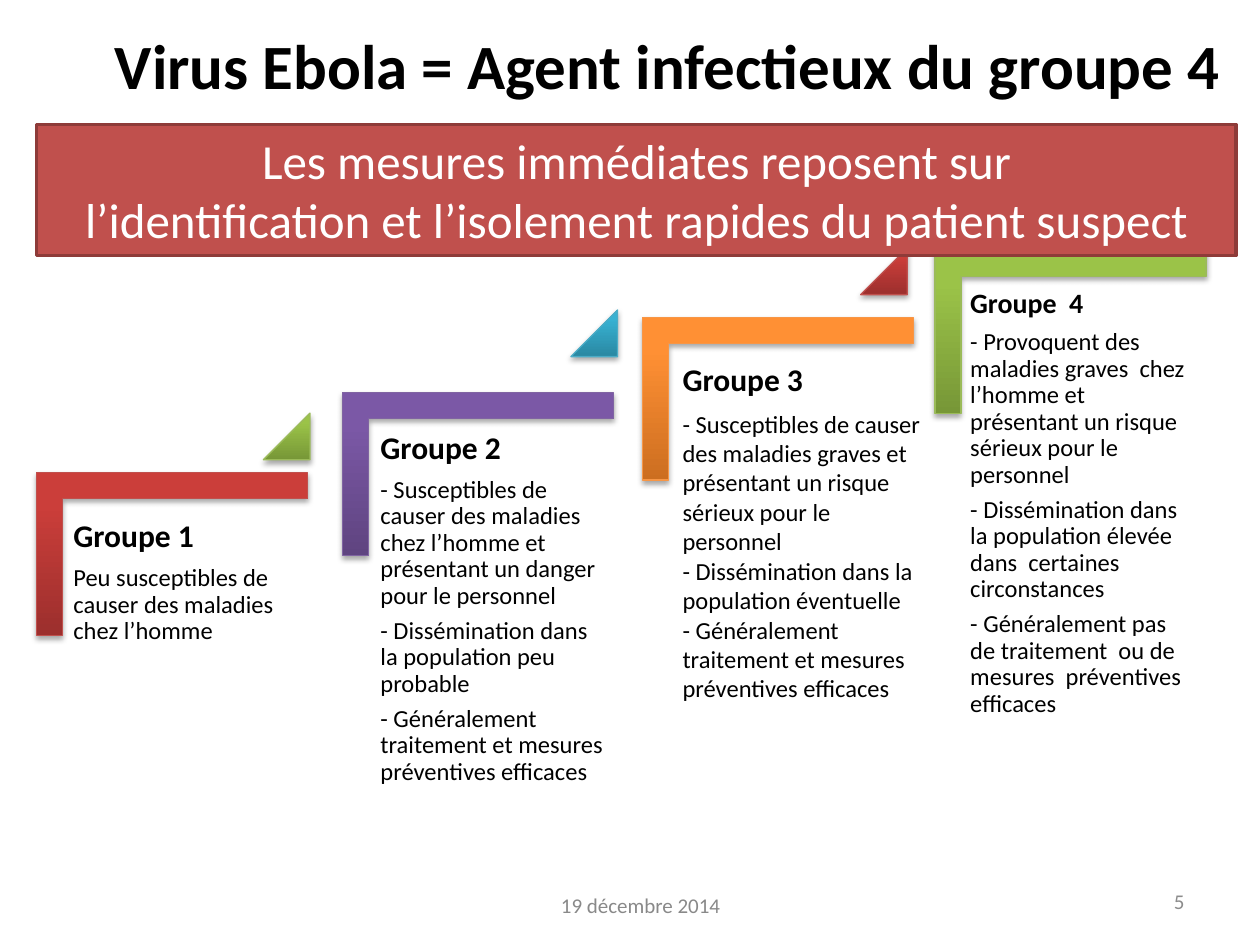
from lxml import etree
from pptx import Presentation
from pptx.dml.color import RGBColor
from pptx.enum.shapes import MSO_SHAPE as Preset
from pptx.enum.text import MSO_ANCHOR as Anchor, PP_ALIGN as Align
from pptx.oxml.ns import qn
from pptx.util import Cm, Pt

COLORS = {
    "text": "000000", "white": "FFFFFF", "date": "898989", "number": "8C8C8C",
    "banner": "C0504D", "banner_line": "8E3B39",
}
TONES = {
    "red": ("9C2F2D", "CB3E3A", "C0504D"),
    "green": ("779737", "9BC348", "9BBB59"),
    "purple": ("5F4480", "7B58A6", "8064A2"),
    "blue": ("2A88A2", "37B1D2", "4BACC6"),
    "orange": ("CC6E20", "FF9034", "F79646"),
}
CORNER_WIDTH, CORNER_HEIGHT = 5.46, 3.28
TRIANGLE_SIZE = 0.94

TIGHT = {"inset": 0.18, "spacing": 0.9, "heading_size": 18, "heading_gap": 6.3, "gap": 4.9}
LOOSE = {"inset": None, "spacing": 1, "heading_size": 18, "heading_gap": 6, "gap": 0}

STEPS = [
    {"at": (0.74, 9.53), "tone": "red", "triangle": (4.57, -1.2, "green"),
     "text": (0.56, 0.78, 4.78, 4.32), "style": TIGHT, "heading": "Groupe 1",
     "points": ["Peu susceptibles de causer des maladies chez l’homme"]},
    {"at": (6.91, 7.92), "tone": "purple", "triangle": (4.6, -1.67, "blue"),
     "text": (0.58, 0.61, 4.93, 6.48), "style": TIGHT, "heading": "Groupe 2",
     "points": ["- Susceptibles de causer des maladies chez l’homme et présentant un danger pour le personnel",
                "- Dissémination dans la population peu probable",
                "- Généralement traitement et mesures préventives efficaces"]},
    {"at": (12.95, 6.4), "tone": "orange", "triangle": (4.4, -1.4, "red"),
     "text": (0.56, 0.74, 5.38, 7.32), "style": LOOSE, "heading": "Groupe 3",
     "points": ["- Susceptibles de causer des maladies graves et présentant un risque sérieux pour le personnel",
                "- Dissémination dans la population éventuelle",
                "- Généralement traitement et mesures préventives efficaces"]},
    {"at": (18.85, 5.05), "tone": "green", "triangle": None,
     "text": (0.53, 0.61, 4.93, 4.22), "style": {**TIGHT, "heading_size": 16, "heading_gap": 5.6},
     "heading": "Groupe  4",
     "points": ["- Provoquent des maladies graves  chez l’homme et présentant un risque sérieux pour le personnel",
                "- Dissémination dans la population élevée  dans  certaines  circonstances",
                "- Généralement pas  de traitement  ou de mesures  préventives efficaces"]},
]


def style_para(para, size, color, bold=False, align=Align.LEFT):
    para.alignment = align
    for span in para.runs:
        span.font.name = "Calibri"
        span.font.size = Pt(size)
        span.font.bold = bold
        span.font.color.rgb = RGBColor.from_string(COLORS[color])


def add_line(page, left, top, width, height, text, size, color, align, bold=False):
    box = page.shapes.add_textbox(Cm(left), Cm(top), Cm(width), Cm(height))
    frame = box.text_frame
    frame.word_wrap = True
    frame.vertical_anchor = Anchor.MIDDLE
    frame.text = text
    style_para(frame.paragraphs[0], size, color, bold, align)


def add_glossy(page, preset, left, top, width, height, tone):
    dark, light, edge = TONES[tone]
    shape = page.shapes.add_shape(preset, Cm(left), Cm(top), Cm(width), Cm(height))
    shape.fill.gradient()
    shape.fill.gradient_angle = 90
    for stop, position, color in zip(shape.fill.gradient_stops, (0, 0.8), (dark, light)):
        stop.position = position
        stop.color.rgb = RGBColor.from_string(color)
    shape.line.color.rgb = RGBColor.from_string(edge)
    shape.line.width = Pt(0.75)
    shape.shadow.inherit = False
    properties = shape._element.spPr
    properties.find(qn("a:gradFill")).set("rotWithShape", "0")
    shadow = etree.SubElement(properties.find(qn("a:effectLst")), qn("a:outerShdw"),
                              blurRad="40000", dist="23000", dir="5400000", rotWithShape="0")
    tint = etree.SubElement(shadow, qn("a:srgbClr"), val="000000")
    etree.SubElement(tint, qn("a:alpha"), val="35000")
    return shape


def add_corner(page, left, top, tone):
    shift = (CORNER_WIDTH - CORNER_HEIGHT) / 2
    corner = add_glossy(page, Preset.CORNER, left + shift, top - shift,
                        CORNER_HEIGHT, CORNER_WIDTH, tone)
    corner.rotation = 90
    corner.adjustments[0] = corner.adjustments[1] = 0.16


def add_group_text(page, left, top, width, height, heading, points, style):
    box = page.shapes.add_textbox(Cm(left), Cm(top), Cm(width), Cm(height))
    frame = box.text_frame
    frame.word_wrap = True
    if style["inset"]:
        frame.margin_left = frame.margin_right = Cm(style["inset"])
        frame.margin_top = frame.margin_bottom = Cm(style["inset"])
    frame.text = "\n".join([heading, *points])
    for index, para in enumerate(frame.paragraphs):
        is_heading = index == 0
        para.line_spacing = style["spacing"]
        para.space_after = Pt(style["heading_gap"] if is_heading else style["gap"])
        style_para(para, style["heading_size"] if is_heading else 14, "text", is_heading)


def add_step(page, step):
    left, top = step["at"]
    add_corner(page, left, top, step["tone"])
    if step["triangle"]:
        across, down, tone = step["triangle"]
        triangle = add_glossy(page, Preset.ISOSCELES_TRIANGLE, left + across, top + down,
                              TRIANGLE_SIZE, TRIANGLE_SIZE, tone)
        triangle.adjustments[0] = 1
    across, down, width, height = step["text"]
    add_group_text(page, left + across, top + down, width, height,
                   step["heading"], step["points"], step["style"])


def add_banner(page, left, top, width, height):
    banner = page.shapes.add_shape(Preset.RECTANGLE, Cm(left), Cm(top), Cm(width), Cm(height))
    banner.shadow.inherit = False
    banner.fill.solid()
    banner.fill.fore_color.rgb = RGBColor.from_string(COLORS["banner"])
    banner.line.color.rgb = RGBColor.from_string(COLORS["banner_line"])
    banner.line.width = Pt(2)
    frame = banner.text_frame
    frame.word_wrap = True
    frame.vertical_anchor = Anchor.TOP
    frame.text = ("Les mesures immédiates reposent sur\n"
                  "l’identification et l’isolement rapides du patient suspect")
    for para in frame.paragraphs:
        style_para(para, 28, "white", align=Align.CENTER)


def main():
    deck = Presentation()
    deck.slide_width, deck.slide_height = Cm(25.4), Cm(19.05)
    page = deck.slides.add_slide(deck.slide_layouts[6])
    for step in STEPS:
        add_step(page, step)
    add_line(page, 8.89, 17.73, 8.05, 1.02, "19 décembre 2014", 12, "date", Align.CENTER)
    add_line(page, 18.21, 17.65, 5.92, 1.02, "5", 12, "number", Align.RIGHT)
    add_line(page, 2.03, 0, 22.86, 2.59, "Virus Ebola = Agent infectieux du groupe 4",
             36, "text", Align.CENTER, bold=True)
    add_banner(page, 0.74, 2.51, 24.18, 2.64)
    deck.save("out.pptx")


if __name__ == "__main__":
    main()
